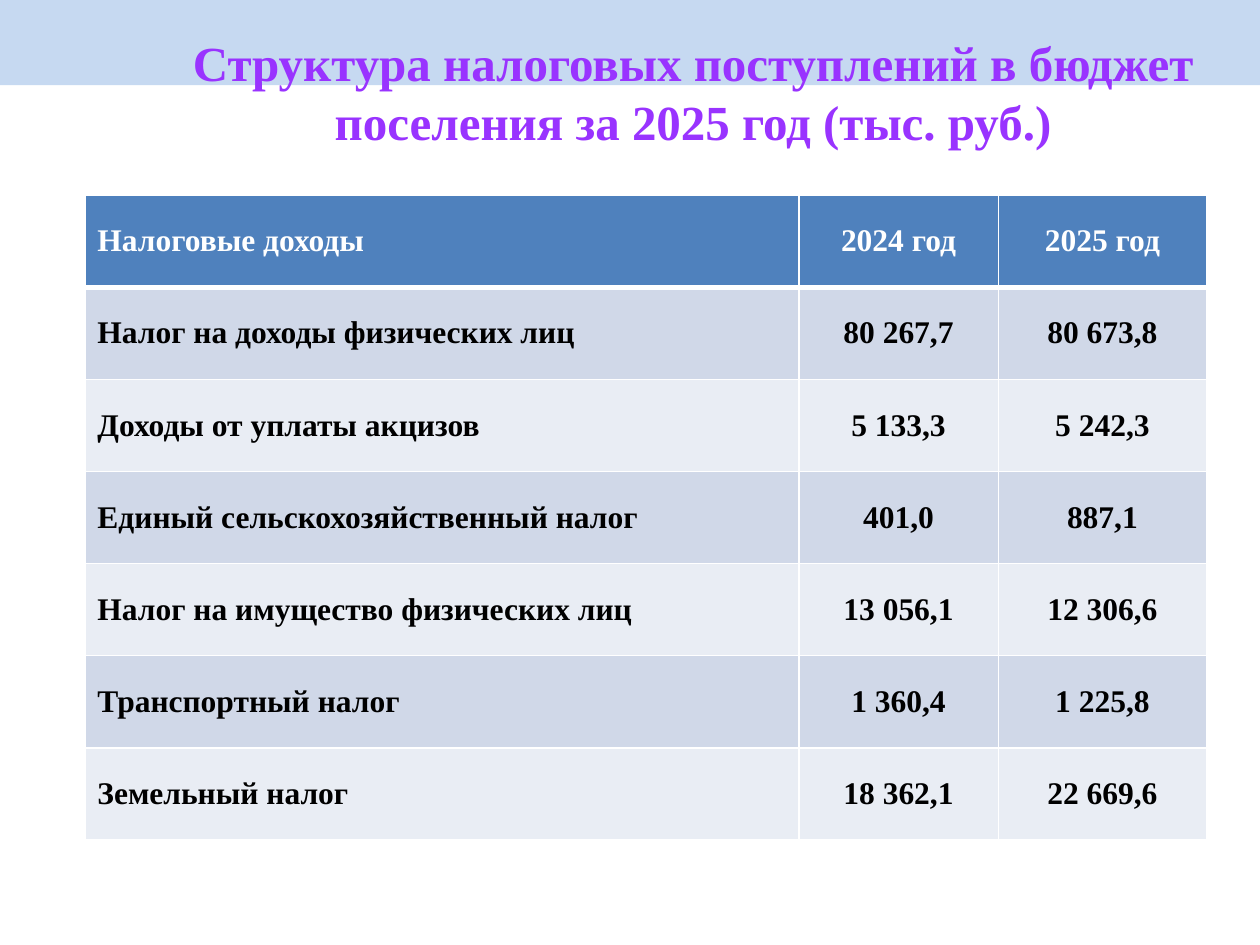
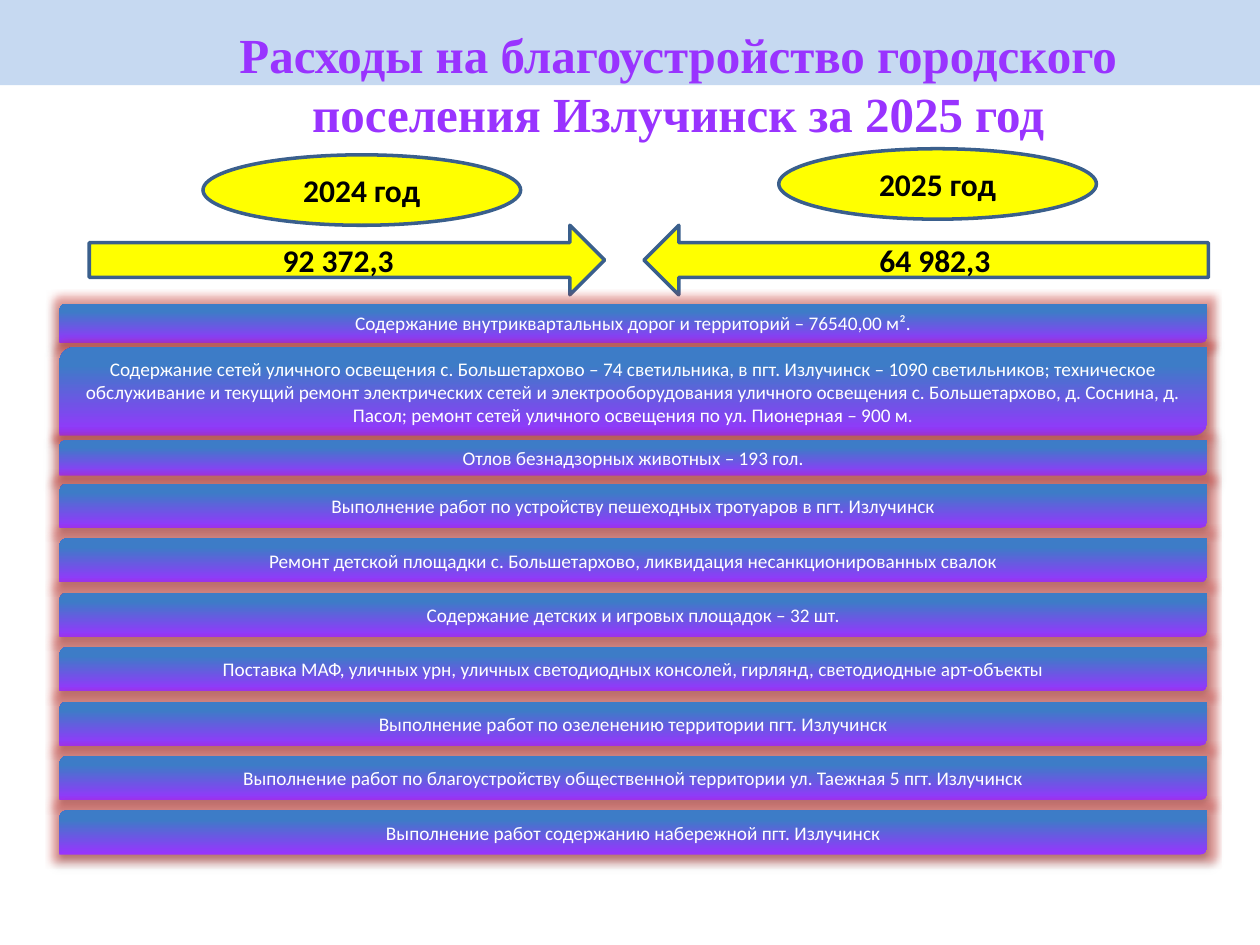
from dataclasses import dataclass

from lxml.etree import fromstring
from pptx import Presentation
from pptx.dml.color import RGBColor
from pptx.enum.shapes import MSO_SHAPE
from pptx.enum.text import MSO_ANCHOR, PP_ALIGN
from pptx.oxml.ns import nsdecls, qn
from pptx.util import Pt


@dataclass(frozen=True)
class Theme:
    band: str = "C6D9F1"
    title: str = "9933FF"
    title_outline: str = "467AB8"
    header: str = "4F81BD"
    odd_row: str = "D0D8E8"
    even_row: str = "E9EDF4"
    yellow: str = "FFFF00"
    outline: str = "3A5F8C"
    bar_top: str = "3D7CC7"
    bar_bottom: str = "9933FF"
    glow: str = "D2332D"
    black: str = "000000"
    white: str = "FFFFFF"
    serif: str = "Times New Roman"
    sans: str = "Calibri"
    title_size: int = 28
    label_size: int = 18
    bar_size: int = 11


theme = Theme()


def rgb(value):
    return RGBColor.from_string(value)


def write(text_frame, text, *, font, size, color, bold=True, align=PP_ALIGN.CENTER):
    """Fill the first paragraph and return it for further formatting."""
    text_frame.word_wrap = True
    paragraph = text_frame.paragraphs[0]
    paragraph.alignment = align
    run = paragraph.add_run()
    run.text = text
    run.font.name = font
    run.font.size = Pt(size)
    run.font.bold = bold
    run.font.color.rgb = rgb(color)
    return paragraph


presentation = Presentation()
presentation.slide_width = Pt(720)
presentation.slide_height = Pt(540)

# Titled slides
titles = [
    ("Структура налоговых поступлений в бюджет поселения за 2025 год (тыс. руб.)", 72, 15),
    ("Расходы на благоустройство городского поселения Излучинск за 2025 год", 63.5, 10),
]
slides = []
for text, left, top in titles:
    slide = presentation.slides.add_slide(presentation.slide_layouts[5])
    title = slide.shapes.title
    title.left, title.top, title.width, title.height = Pt(left), Pt(top), Pt(648), Pt(90)
    title.text_frame.vertical_anchor = MSO_ANCHOR.TOP
    paragraph = write(title.text_frame, text, font=theme.serif,
                      size=theme.title_size, color=theme.title)
    paragraph.line_spacing = Pt(33.75)
    paragraph.runs[0].font._element.insert(0, fromstring(
        f'<a:ln {nsdecls("a")} w="10541"><a:solidFill>'
        f'<a:srgbClr val="{theme.title_outline}"/></a:solidFill></a:ln>'))
    slides.append(slide)
tax_slide, works_slide = slides

# Top band, moved to the slide master so that every slide shows it
band = tax_slide.shapes.add_shape(MSO_SHAPE.RECTANGLE, 0, 0, Pt(720), Pt(48.75))
band.shadow.inherit = False
band.fill.solid()
band.fill.fore_color.rgb = rgb(theme.band)
band.line.fill.background()
band.element.nvSpPr.cNvPr.set("id", "20")
presentation.slide_master.shapes.element.insert(2, band.element)

# Tax revenue table
tax_rows = [
    ("Налоговые доходы", "2024 год", "2025 год"),
    ("Налог на доходы физических лиц", "80 267,7", "80 673,8"),
    ("Доходы от уплаты акцизов", "5 133,3", "5 242,3"),
    ("Единый сельскохозяйственный налог", "401,0", "887,1"),
    ("Налог на имущество физических лиц", "13 056,1", "12 306,6"),
    ("Транспортный налог", "1 360,4", "1 225,8"),
    ("Земельный налог", "18 362,1", "22 669,6"),
]
column_widths = (408, 114, 119)
row_height = 52.65
table = tax_slide.shapes.add_table(
    len(tax_rows), len(column_widths), Pt(48.5), Pt(111.5),
    Pt(sum(column_widths)), Pt(row_height * len(tax_rows))).table
for column, width in zip(table.columns, column_widths):
    column.width = Pt(width)
for row_index, values in enumerate(tax_rows):
    table.rows[row_index].height = Pt(row_height)
    is_header = row_index == 0
    row_fill = theme.header if is_header else (theme.even_row, theme.odd_row)[row_index % 2]
    border_widths = {"L": 1, "R": 1, "T": 3 if row_index == 1 else 1, "B": 3 if is_header else 1}
    for column_index, value in enumerate(values):
        cell = table.cell(row_index, column_index)
        cell.vertical_anchor = MSO_ANCHOR.MIDDLE
        write(cell.text_frame, value, font=theme.serif, size=theme.label_size,
              color=theme.white if is_header else theme.black,
              align=PP_ALIGN.CENTER if column_index else PP_ALIGN.LEFT)
        properties = cell._tc.get_or_add_tcPr()
        for side, width in border_widths.items():
            properties.append(fromstring(
                f'<a:ln{side} {nsdecls("a")} w="{Pt(width)}"><a:solidFill>'
                f'<a:srgbClr val="{theme.white}"/></a:solidFill></a:ln{side}>'))
        cell.fill.solid()
        cell.fill.fore_color.rgb = rgb(row_fill)

# Yearly totals
year_shapes = [
    (MSO_SHAPE.RIGHT_ARROW, "92 372,3", 51, 128.75, 294.5, 39.75),
    (MSO_SHAPE.LEFT_ARROW, "64 982,3", 368, 128.75, 322.5, 39.75),
    (MSO_SHAPE.OVAL, "2024 год", 116, 88.5, 181.5, 40.25),
    (MSO_SHAPE.OVAL, "2025 год", 445, 85, 181.5, 40.25),
]
for kind, text, *box in year_shapes:
    shape = works_slide.shapes.add_shape(kind, *map(Pt, box))
    shape.shadow.inherit = False
    shape.fill.solid()
    shape.fill.fore_color.rgb = rgb(theme.yellow)
    shape.line.color.rgb = rgb(theme.outline)
    shape.line.width = Pt(2)
    write(shape.text_frame, text, font=theme.sans, size=theme.label_size, color=theme.black)

# Improvement works: three bars of their own height, then an even stack
bars = [
    (173.5, 22.5, "Содержание внутриквартальных дорог и территорий – 76540,00 м²."),
    (198.5, 50.5, "Содержание сетей уличного освещения с. Большетархово – 74 светильника, "
                  "в пгт. Излучинск – 1090 светильников; техническое обслуживание и текущий "
                  "ремонт электрических сетей и электрооборудования уличного освещения "
                  "с. Большетархово, д. Соснина, д. Пасол; ремонт сетей уличного освещения "
                  "по ул. Пионерная – 900 м."),
    (251.75, 20, "Отлов безнадзорных животных – 193 гол."),
]
stacked_works = [
    "Выполнение работ по устройству пешеходных тротуаров в пгт. Излучинск",
    "Ремонт детской площадки с. Большетархово, ликвидация несанкционированных свалок",
    "Содержание детских и игровых площадок – 32 шт.",
    "Поставка МАФ, уличных урн, уличных светодиодных консолей, гирлянд, светодиодные арт-объекты",
    "Выполнение работ по озеленению территории пгт. Излучинск",
    "Выполнение работ по благоустройству общественной территории ул. Таежная 5 пгт. Излучинск",
    "Выполнение работ содержанию набережной пгт. Излучинск",
]
bars += [(276.5 + 31.1 * index, 25.25, text) for index, text in enumerate(stacked_works)]
bar_effects = (
    f'<a:glow {nsdecls("a")} rad="{Pt(8)}"><a:srgbClr val="{theme.glow}">'
    '<a:alpha val="40000"/></a:srgbClr></a:glow>',
    f'<a:outerShdw {nsdecls("a")} blurRad="{Pt(3.1)}" dist="{Pt(1.8)}" dir="5400000" '
    f'rotWithShape="0"><a:srgbClr val="{theme.black}"><a:alpha val="35000"/>'
    '</a:srgbClr></a:outerShdw>',
)
for top, height, text in bars:
    bar = works_slide.shapes.add_shape(
        MSO_SHAPE.ROUND_2_DIAG_RECTANGLE, Pt(34), Pt(top), Pt(656), Pt(height))
    bar.fill.gradient()
    bar.fill.gradient_angle = 90
    bottom_stop, top_stop = bar.fill.gradient_stops
    bottom_stop.color.rgb, bottom_stop.position = rgb(theme.bar_bottom), 0
    top_stop.color.rgb, top_stop.position = rgb(theme.bar_top), 0.8
    bar.line.fill.background()
    bar.shadow.inherit = False
    effect_list = bar.element.spPr.find(qn("a:effectLst"))
    for effect in bar_effects:
        effect_list.append(fromstring(effect))
    write(bar.text_frame, text, font=theme.sans, size=theme.bar_size,
          color=theme.white, bold=False)

presentation.save("out.pptx")
